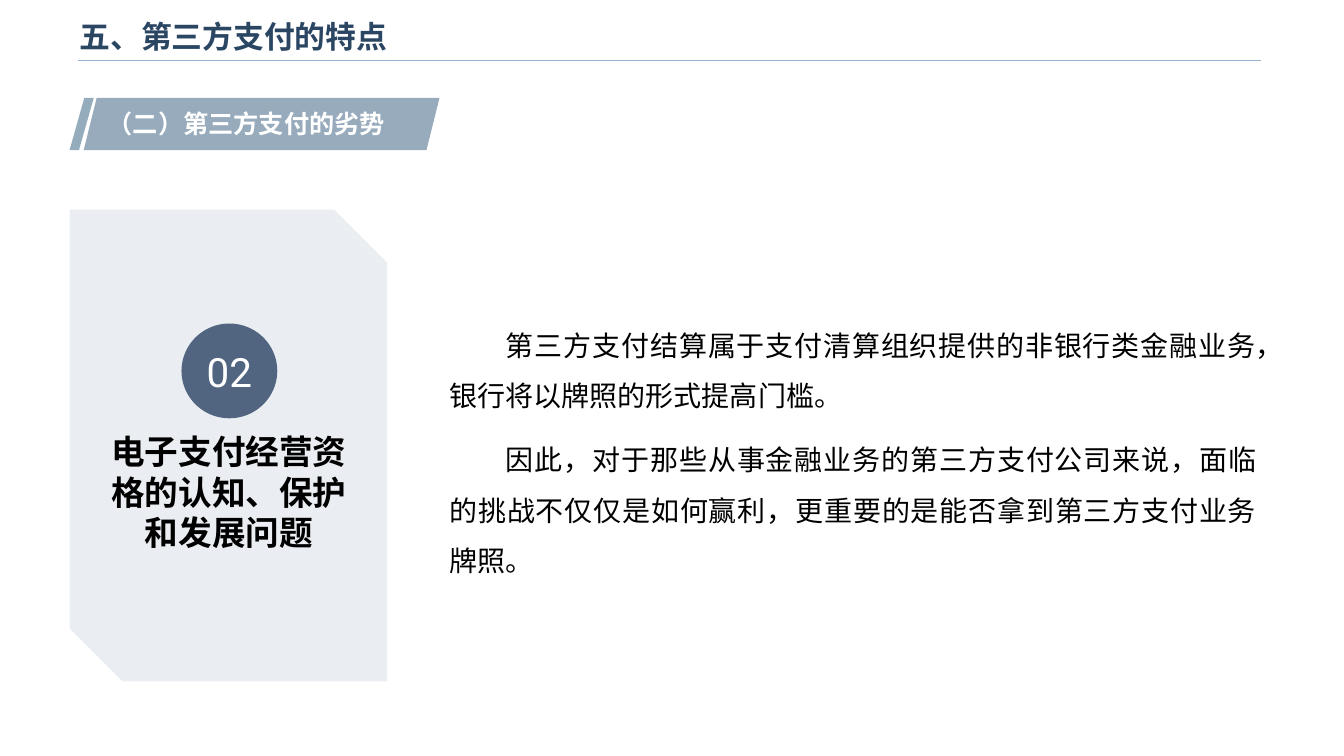
from dataclasses import dataclass

from lxml.etree import SubElement
from pptx import Presentation
from pptx.dml.color import RGBColor
from pptx.enum.shapes import MSO_CONNECTOR, MSO_SHAPE
from pptx.enum.text import MSO_ANCHOR, PP_ALIGN
from pptx.oxml.ns import qn
from pptx.shapes.autoshape import Shape
from pptx.slide import Slide
from pptx.text.text import TextFrame
from pptx.util import Inches, Pt

NAVY = RGBColor(0x2B, 0x46, 0x63)
RULE_BLUE = RGBColor(0x98, 0xB4, 0xD2)
TAB_ACCENT = RGBColor(0x94, 0xAC, 0xBC)
TAB_BLUE = RGBColor(0x97, 0xAB, 0xBD)
PANEL_GREY = RGBColor(0xEA, 0xEE, 0xF2)
BADGE_BLUE = RGBColor(0x52, 0x65, 0x80)
BLACK = RGBColor(0, 0, 0)
WHITE = RGBColor(0xFF, 0xFF, 0xFF)
CJK_FONT = "Noto Sans CJK SC"


@dataclass(frozen=True)
class Box:
    left: float
    top: float
    width: float
    height: float

    def lengths(self) -> tuple[int, int, int, int]:
        return (Inches(self.left), Inches(self.top),
                Inches(self.width), Inches(self.height))


@dataclass(frozen=True)
class TextStyle:
    size: float
    color: RGBColor
    bold: bool = False
    font: str = CJK_FONT
    align: PP_ALIGN = PP_ALIGN.LEFT


@dataclass(frozen=True)
class Panel:
    kind: MSO_SHAPE
    box: Box
    fill: RGBColor
    slant: float | None = None


TAB_PANELS = (
    Panel(MSO_SHAPE.PARALLELOGRAM, Box(0.69, 0.97, 0.24, 0.52), TAB_ACCENT, 0.61),
    Panel(MSO_SHAPE.PARALLELOGRAM, Box(0.83, 0.97, 3.53, 0.52), TAB_BLUE, 0.25),
)
TOPIC_PANEL = Panel(MSO_SHAPE.SNIP_2_DIAG_RECTANGLE, Box(0.69, 2.08, 3.15, 4.68), PANEL_GREY)
NUMBER_BADGE = Panel(MSO_SHAPE.OVAL, Box(1.8, 3.21, 0.95, 0.94), BADGE_BLUE)

TITLE_STYLE = TextStyle(22, NAVY, bold=True, font="Arial")
TAB_STYLE = TextStyle(18, WHITE, bold=True)
TOPIC_STYLE = TextStyle(24, BLACK, bold=True, align=PP_ALIGN.CENTER)
BODY_STYLE = TextStyle(20, BLACK, align=PP_ALIGN.JUSTIFY)
NUMBER_STYLE = TextStyle(28.8, WHITE, font="Roboto", align=PP_ALIGN.CENTER)

BODY = (
    "第三方支付结算属于支付清算组织提供的非银行类金融业务，银行将以牌照的形式提高门槛。",
    "因此，对于那些从事金融业务的第三方支付公司来说，面临的挑战不仅仅是如何赢利，"
    "更重要的是能否拿到第三方支付业务牌照。",
)


def write(frame: TextFrame, text: str, style: TextStyle) -> None:
    """Fill a frame, one paragraph per line, and format its runs."""
    frame.text = text
    for paragraph in frame.paragraphs:
        paragraph.alignment = style.align
        for run in paragraph.runs:
            run.font.size = Pt(style.size)
            run.font.bold = style.bold
            run.font.color.rgb = style.color
            run.font.name = style.font
            SubElement(run.font._element, qn("a:ea"), typeface=CJK_FONT)


def add_panel(slide: Slide, panel: Panel) -> Shape:
    shape = slide.shapes.add_shape(panel.kind, *panel.box.lengths())
    shape.shadow.inherit = False
    shape.fill.solid()
    shape.fill.fore_color.rgb = panel.fill
    shape.line.fill.background()
    if panel.slant is not None:
        shape.adjustments[0] = panel.slant
    return shape


def add_text(slide: Slide, box: Box, text: str, style: TextStyle) -> TextFrame:
    frame = slide.shapes.add_textbox(*box.lengths()).text_frame
    frame.word_wrap = True
    write(frame, text, style)
    return frame


def add_title(slide: Slide) -> None:
    title = slide.shapes.title
    title.left, title.top, title.width, title.height = Box(0.69, 0.09, 10.71, 0.53).lengths()
    title.text_frame.vertical_anchor = MSO_ANCHOR.MIDDLE
    write(title.text_frame, "五、第三方支付的特点", TITLE_STYLE)

    rule = slide.shapes.add_connector(
        MSO_CONNECTOR.STRAIGHT, Inches(0.77), Inches(0.6), Inches(12.51), Inches(0.6))
    rule.line.color.rgb = RULE_BLUE
    rule.line.width = Pt(1)
    SubElement(rule._element.spPr, qn("a:effectLst"))


def add_body(slide: Slide) -> None:
    frame = add_text(slide, Box(4.36, 3.04, 8.2, 2.76), "\n".join(BODY), BODY_STYLE)
    for paragraph in frame.paragraphs:
        paragraph.line_spacing = 1.5
        paragraph.space_after = Pt(10)
        properties = paragraph._p.get_or_add_pPr()
        properties.set("marL", "0")
        properties.set("indent", str(Inches(0.56)))


def add_badge(slide: Slide) -> None:
    frame = add_panel(slide, NUMBER_BADGE).text_frame
    frame.margin_left = frame.margin_right = frame.margin_top = frame.margin_bottom = 0
    frame.word_wrap = False
    frame.vertical_anchor = MSO_ANCHOR.MIDDLE
    write(frame, "02", NUMBER_STYLE)


def main() -> None:
    presentation = Presentation()
    presentation.slide_width = Inches(13.33)
    presentation.slide_height = Inches(7.5)
    slide = presentation.slides.add_slide(presentation.slide_layouts.get_by_name("Title Only"))

    add_title(slide)
    for panel in TAB_PANELS:
        add_panel(slide, panel)
    add_text(slide, Box(0.97, 1.03, 3.08, 0.4), "（二）第三方支付的劣势", TAB_STYLE)
    add_panel(slide, TOPIC_PANEL)
    add_text(slide, Box(0.96, 4.23, 2.62, 1.31),
             "电子支付经营资格的认知、保护和发展问题", TOPIC_STYLE)
    add_body(slide)
    add_badge(slide)
    presentation.save("out.pptx")


if __name__ == "__main__":
    main()
